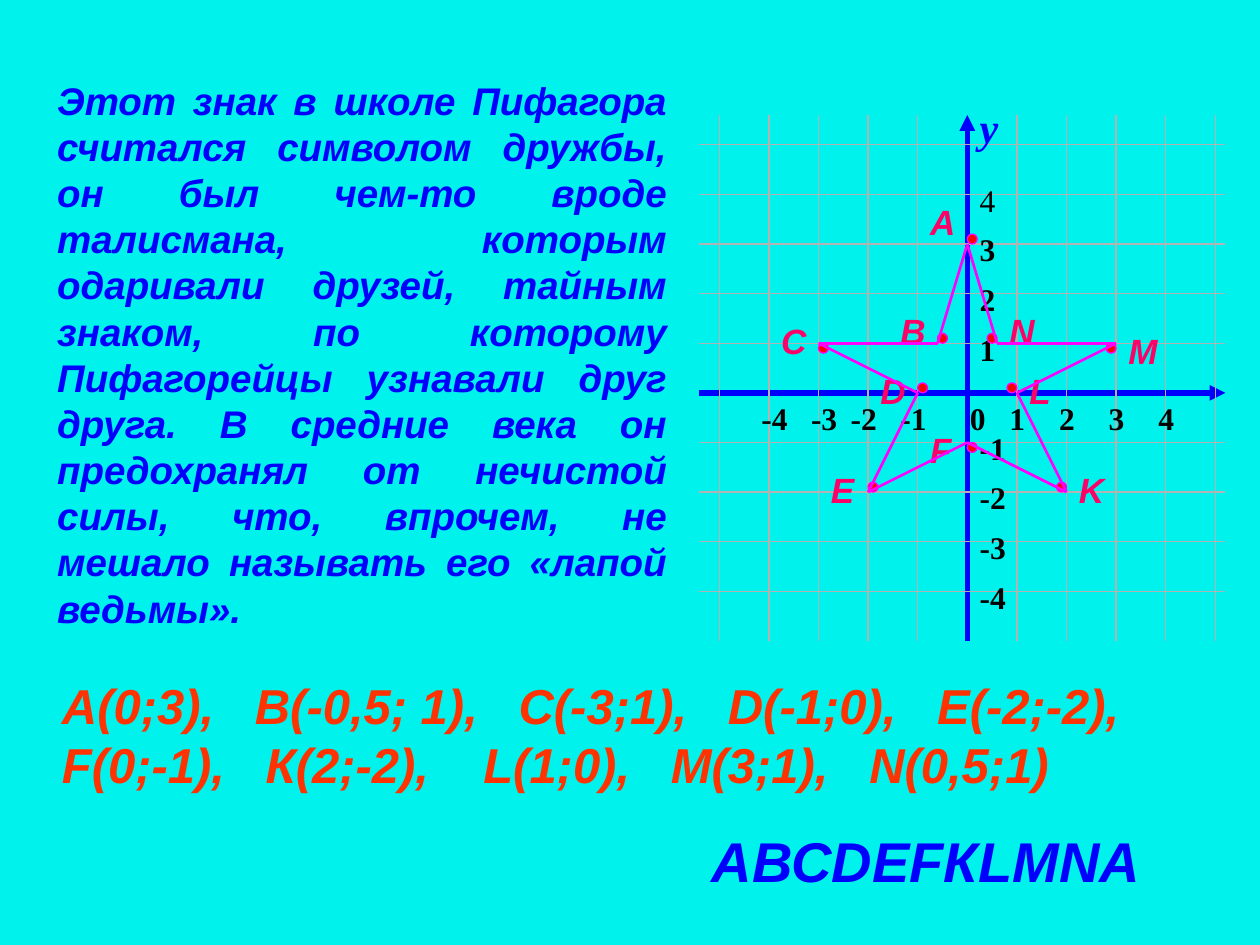
import pptx
import pptx.util
import pptx.dml.color
import pptx.enum.shapes
import pptx.enum.text
import pptx.oxml.ns
import lxml.etree
from dataclasses import dataclass

Cm, Pt = pptx.util.Cm, pptx.util.Pt
Rgb = pptx.dml.color.RGBColor.from_string
Kind = pptx.enum.shapes.MSO_SHAPE
Fit = pptx.enum.text.MSO_AUTO_SIZE


@dataclass(frozen=True)
class Theme:
    back: str = "00F2EC"
    blue: str = "0000FF"
    grid: str = "B2B2B2"
    black: str = "000000"
    orange: str = "FF3300"
    pink: str = "FF0066"
    red: str = "FF0000"
    star: str = "FF00FF"
    sans: str = "Arial"
    serif: str = "Times New Roman"
    tick: int = 18
    mark: int = 20
    body: int = 22
    axis: int = 24
    list: int = 28
    code: int = 32


class Page:
    def __init__(self, slide, theme):
        self.slide = slide
        self.theme = theme
        self.home = slide.shapes
        fill = slide.background.fill
        fill.solid()
        fill.fore_color.rgb = Rgb(theme.back)

    def group(self):
        self.home = self.slide.shapes.add_group_shape().shapes

    def leave(self):
        self.home = self.slide.shapes

    def style(self, frame, words, size, color, face, bold=True, slant=True):
        frame.text = words
        para = frame.paragraphs[0]
        font = para.font
        font.name, font.size = face, Pt(size)
        font.bold, font.italic = bold, slant
        font.color.rgb = Rgb(color)
        return para

    def title(self, words, left, top, width, height):
        box = self.slide.shapes.title
        box.left, box.top = Cm(left), Cm(top)
        box.width, box.height = Cm(width), Cm(height)
        frame = box.text_frame
        frame.auto_size = Fit.NONE
        frame.vertical_anchor = pptx.enum.text.MSO_ANCHOR.MIDDLE
        para = self.style(frame, words, self.theme.body, self.theme.blue,
                          self.theme.sans)
        para.alignment = pptx.enum.text.PP_ALIGN.JUSTIFY

    def text(self, words, left, top, width, height, *look, wrap=False, **more):
        box = self.home.add_textbox(Cm(left), Cm(top), Cm(width), Cm(height))
        frame = box.text_frame
        frame.word_wrap = wrap
        frame.auto_size = Fit.SHAPE_TO_FIT_TEXT
        self.style(frame, words, *look, **more)

    def line(self, start, end, color, width, arrow=False):
        line = self.home.add_connector(
            pptx.enum.shapes.MSO_CONNECTOR.STRAIGHT,
            *(Cm(n) for n in (*start, *end)))
        line.line.color.rgb = Rgb(color)
        line.line.width = Pt(width)
        props = line._element.spPr
        if arrow:
            tail = lxml.etree.SubElement(props.find(pptx.oxml.ns.qn("a:ln")),
                                         pptx.oxml.ns.qn("a:tailEnd"))
            tail.set("type", "triangle")
        lxml.etree.SubElement(props, pptx.oxml.ns.qn("a:effectLst"))

    def dot(self, left, top, size):
        dot = self.home.add_shape(Kind.OVAL, Cm(left), Cm(top),
                                  Cm(size), Cm(size))
        dot.shadow.inherit = False
        dot.fill.solid()
        dot.fill.fore_color.rgb = Rgb(self.theme.red)
        dot.line.color.rgb = Rgb(self.theme.star)
        dot.line.width = Pt(0.75)


STORY = (
    "Этот знак в школе Пифагора считался символом дружбы, он был чем-то "
    "вроде талисмана, которым одаривали друзей, тайным знаком, по которому "
    "Пифагорейцы узнавали друг друга. В средние века он предохранял от "
    "нечистой силы, что, впрочем, не мешало называть его «лапой ведьмы»."
)
POINTS = ("А(0;3),   В(-0,5; 1),   С(-3;1),   D(-1;0),   Е(-2;-2), "
          "F(0;-1),   К(2;-2),    L(1;0),   М(3;1),   N(0,5;1)")

# One unit of the plane is one centimetre
ZERO_X, ZERO_Y = 19.5, 7.92
LEFT, RIGHT, TOP, FOOT = 14.1, 24.7, 2.32, 12.92
DOT = 0.2

# Name, point, label corner, whether the dot sits above the point
STAR = [
    ("A", (0, 3), (-1, 4), True),
    ("B", (-0.6, 1), (-1.6, 1.8), True),
    ("C", (-3, 1), (-4, 1.6), False),
    ("D", (-1, 0), (-2, 0.6), True),
    ("E", (-2, -2), (-3, -1.4), True),
    ("F", (0, -1), (-1, -0.6), False),
    ("K", (2, -2), (2, -1.4), True),
    ("L", (1, 0), (1, 0.6), True),
    ("M", (3, 1), (3, 1.4), False),
    ("N", (0.6, 1), (0.6, 1.8), True),
]


def place(x, y):
    return ZERO_X + x, ZERO_Y - y


def draw_plane(page):
    theme = page.theme
    page.group()
    # Axes
    page.line((LEFT, ZERO_Y), (RIGHT, ZERO_Y), theme.blue, 3, arrow=True)
    page.line((ZERO_X, FOOT), (ZERO_X, TOP), theme.blue, 3, arrow=True)
    # Grid
    for n in range(-5, 6):
        if n == 0:
            continue
        x, y = place(n, n)
        if n > -5:
            page.line((LEFT, y), (RIGHT, y), theme.grid, 0.75)
        page.line((x, FOOT), (x, TOP), theme.grid, 0.5 if n == -5 else 0.75)
    # Axis name and numbers
    page.text("y", ZERO_X, 1.93, 1.4, 1.27, theme.axis, theme.blue,
              theme.serif, wrap=True)
    look = (theme.tick, theme.black, theme.serif)
    for n in range(-4, 5):
        width = 1.04 if n < 0 else 0.84
        shift = {0: 0.2, -1: 0.6, -2: 0.6}.get(n, 0.4)
        page.text(str(n), *place(n - shift, 0), width, 1.02, *look,
                  slant=False)
        if n:
            page.text(str(n), *place(0, n + 0.4), width, 1.02, *look,
                      bold=n != 4, slant=False)
    page.leave()


def draw_star(page):
    theme = page.theme
    # Dots and letters
    page.group()
    for name, (x, y), corner, above in STAR:
        page.dot(*place(x - DOT * (x > 0), y + DOT * above), DOT)
        page.text(name, *place(*corner), 1.02, 1.09, theme.mark, theme.pink,
                  theme.sans)
    page.leave()
    # Outline
    ends = [place(*point) for _, point, _, _ in STAR]
    for start, end in zip(ends, ends[1:] + ends[:1]):
        page.line(start, end, theme.star, 1.5)


def main():
    deck = pptx.Presentation()
    deck.slide_width, deck.slide_height = Cm(25.4), Cm(19.05)
    theme = Theme()
    page = Page(deck.slides.add_slide(deck.slide_layouts[5]), theme)
    page.title(STORY, 0.9, 0.53, 12.8, 13.2)
    draw_plane(page)
    # Coordinates and drawing order
    page.text(POINTS, 1, 13.5, 22.63, 2.64, theme.list, theme.orange,
              theme.sans, wrap=True)
    page.text("АВСDЕFКLМNА", 14.1, 16.54, 9.22, 1.62, theme.code, theme.blue,
              theme.sans)
    draw_star(page)
    deck.save("out.pptx")


if __name__ == "__main__":
    main()
